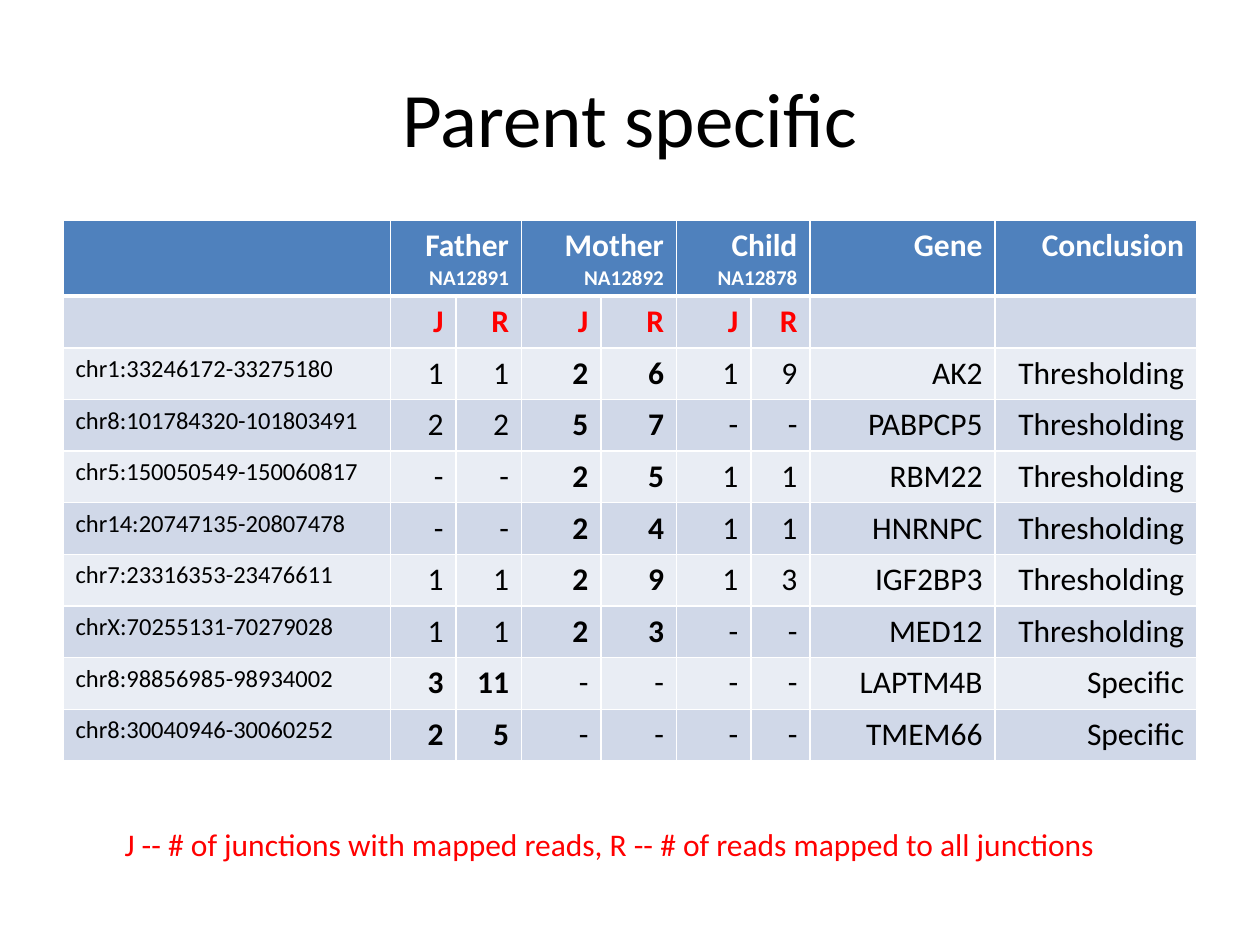
from dataclasses import dataclass

from lxml.etree import SubElement
from pptx import Presentation
from pptx.dml.color import RGBColor
from pptx.enum.text import MSO_ANCHOR, PP_ALIGN
from pptx.oxml.ns import qn
from pptx.slide import Slide
from pptx.table import Table, _Cell
from pptx.text.text import TextFrame
from pptx.util import Inches, Pt

FONT = "Calibri"
BLACK = RGBColor(0x00, 0x00, 0x00)
WHITE = RGBColor(0xFF, 0xFF, 0xFF)
RED = RGBColor(0xFF, 0x00, 0x00)
HEADER_BLUE = RGBColor(0x4F, 0x81, 0xBD)
BAND_DARK = RGBColor(0xD0, 0xD8, 0xE8)
BAND_LIGHT = RGBColor(0xE9, 0xED, 0xF4)

COLUMN_WIDTHS = (2.6, 0.52, 0.52, 0.63, 0.6, 0.59, 0.47, 1.47, 1.6)
ROW_HEIGHT = 0.41


@dataclass(frozen=True)
class Run:
    text: str
    size: float = 18
    color: RGBColor = BLACK
    bold: bool = False


@dataclass(frozen=True)
class Person:
    column: int
    paragraphs: tuple[tuple[Run, ...], ...]


@dataclass(frozen=True)
class Region:
    location: str
    father: tuple[str, str]
    mother: tuple[str, str]
    child: tuple[str, str]
    gene: str
    conclusion: str


def header_run(text: str, size: float = 18) -> Run:
    return Run(text, size, WHITE, True)


PEOPLE = (
    Person(1, ((header_run("Father"),), (header_run("NA12891", 12),))),
    Person(3, ((header_run("Mother "), header_run("NA12892", 12)),)),
    Person(5, ((header_run("Child "), header_run("NA12878", 12)),)),
)
NONE = ("-", "-")
REGIONS = (
    Region("chr1:33246172-33275180", ("1", "1"), ("2", "6"), ("1", "9"), "AK2", "Thresholding"),
    Region("chr8:101784320-101803491", ("2", "2"), ("5", "7"), NONE, "PABPCP5", "Thresholding"),
    Region("chr5:150050549-150060817", NONE, ("2", "5"), ("1", "1"), "RBM22", "Thresholding"),
    Region("chr14:20747135-20807478", NONE, ("2", "4"), ("1", "1"), "HNRNPC", "Thresholding"),
    Region("chr7:23316353-23476611", ("1", "1"), ("2", "9"), ("1", "3"), "IGF2BP3", "Thresholding"),
    Region("chrX:70255131-70279028", ("1", "1"), ("2", "3"), NONE, "MED12", "Thresholding"),
    Region("chr8:98856985-98934002", ("3", "11"), NONE, NONE, "LAPTM4B", "Specific"),
    Region("chr8:30040946-30060252", ("2", "5"), NONE, NONE, "TMEM66", "Specific"),
)


def write_paragraphs(
    frame: TextFrame, paragraphs: tuple[tuple[Run, ...], ...], alignment: PP_ALIGN
) -> None:
    for index, runs in enumerate(paragraphs):
        paragraph = frame.add_paragraph() if index else frame.paragraphs[0]
        paragraph.alignment = alignment
        for item in runs:
            run = paragraph.add_run()
            run.text = item.text
            run.font.name = FONT
            run.font.size = Pt(item.size)
            run.font.bold = item.bold
            run.font.color.rgb = item.color


def add_text(
    slide: Slide, box: tuple[float, float, float, float], run: Run,
    alignment: PP_ALIGN, anchor: MSO_ANCHOR, wrap: bool,
) -> None:
    frame = slide.shapes.add_textbox(*map(Inches, box)).text_frame
    frame.word_wrap = wrap
    frame.vertical_anchor = anchor
    write_paragraphs(frame, ((run,),), alignment)


def style_cell(cell: _Cell, fill: RGBColor, bottom_width: float) -> None:
    properties = cell._tc.get_or_add_tcPr()
    widths = {"a:lnL": 1, "a:lnR": 1, "a:lnT": 1, "a:lnB": bottom_width}
    for tag, width in widths.items():
        line = SubElement(properties, qn(tag), w=str(Pt(width)))
        solid = SubElement(line, qn("a:solidFill"))
        SubElement(solid, qn("a:srgbClr"), val=str(WHITE))
    cell.fill.solid()
    cell.fill.fore_color.rgb = fill


def style_table(table: Table) -> None:
    for column, width in zip(table.columns, COLUMN_WIDTHS):
        column.width = Inches(width)
    for row_index, row in enumerate(table.rows):
        row.height = Inches(ROW_HEIGHT)
        band = BAND_DARK if row_index % 2 else BAND_LIGHT
        for cell in row.cells:
            style_cell(cell, band if row_index else HEADER_BLUE, 1 if row_index else 3)


def write_cell(
    table: Table, row: int, column: int, run: Run, alignment: PP_ALIGN = PP_ALIGN.RIGHT
) -> None:
    write_paragraphs(table.cell(row, column).text_frame, ((run,),), alignment)


def write_header(table: Table) -> None:
    for person in PEOPLE:
        cell = table.cell(0, person.column)
        cell.merge(table.cell(0, person.column + 1))
        write_paragraphs(cell.text_frame, person.paragraphs, PP_ALIGN.RIGHT)
        for offset, label in enumerate("JR"):
            write_cell(table, 1, person.column + offset, Run(label, color=RED, bold=True))
    write_cell(table, 0, 7, header_run("Gene"))
    write_cell(table, 0, 8, header_run("Conclusion"))


def write_region(table: Table, row: int, region: Region) -> None:
    write_cell(table, row, 0, Run(region.location, 14), PP_ALIGN.LEFT)
    father_specific = region.mother == NONE
    counts = (
        (region.father, father_specific),
        (region.mother, not father_specific),
        (region.child, False),
    )
    for person, (pair, bold) in zip(PEOPLE, counts):
        for offset, count in enumerate(pair):
            write_cell(table, row, person.column + offset, Run(count, bold=bold))
    write_cell(table, row, 7, Run(region.gene))
    write_cell(table, row, 8, Run(region.conclusion))


def add_region_table(slide: Slide) -> None:
    row_count = len(REGIONS) + 2
    table = slide.shapes.add_table(
        row_count, len(COLUMN_WIDTHS), Inches(0.5), Inches(1.75),
        Inches(sum(COLUMN_WIDTHS)), Inches(ROW_HEIGHT * row_count),
    ).table
    style_table(table)
    write_header(table)
    for row, region in enumerate(REGIONS, start=2):
        write_region(table, row, region)


def main() -> None:
    presentation = Presentation()
    presentation.slide_width = Inches(10)
    presentation.slide_height = Inches(7.5)
    slide = presentation.slides.add_slide(presentation.slide_layouts[6])
    add_text(slide, (0.5, 0.3, 9, 1.25), Run("Parent specific", 44),
             PP_ALIGN.CENTER, MSO_ANCHOR.MIDDLE, True)
    add_region_table(slide)
    legend = "J -- # of junctions with mapped reads, R -- # of reads mapped to all junctions"
    add_text(slide, (0.89, 6.5, 8.01, 0.4), Run(legend, color=RED),
             PP_ALIGN.LEFT, MSO_ANCHOR.TOP, False)
    presentation.save("out.pptx")


if __name__ == "__main__":
    main()
